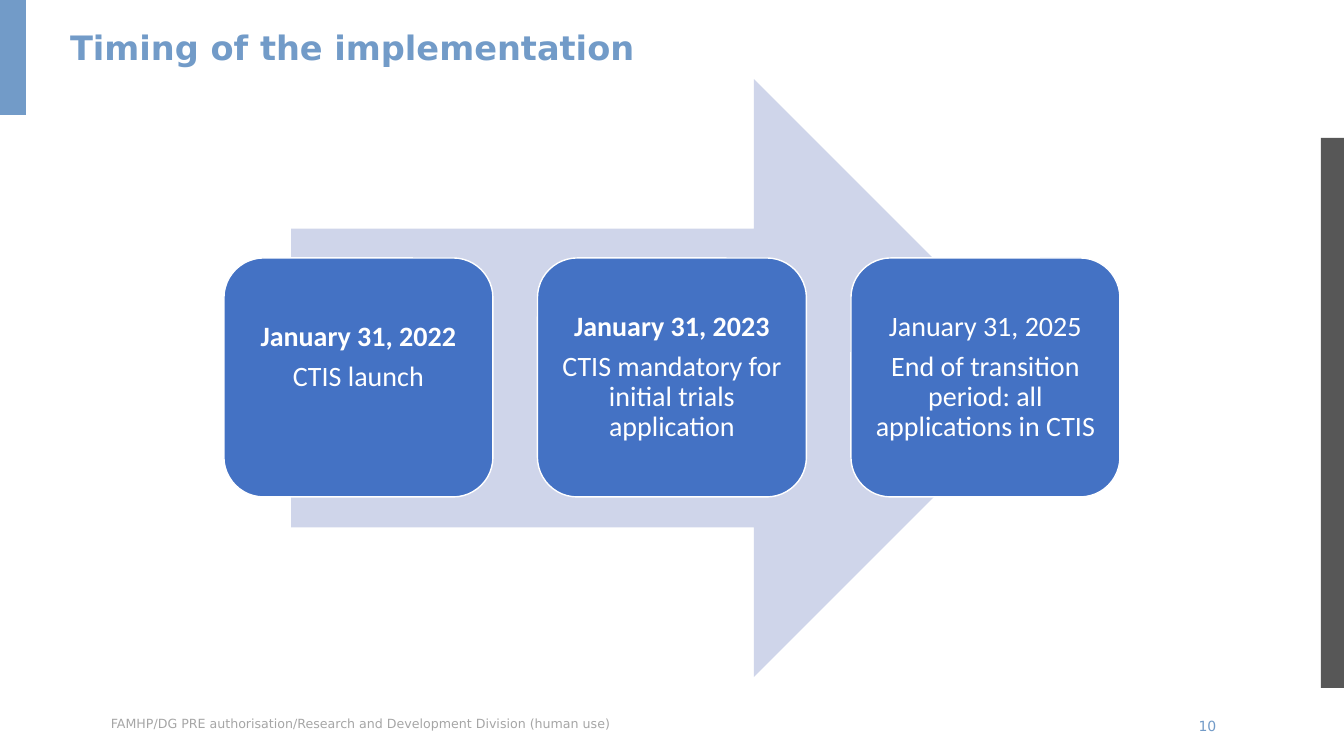
import pptx
import pptx.dml.color
import pptx.enum.shapes
import pptx.enum.text
import pptx.util

TITLE = "Timing of the implementation"
FOOTER = "FAMHP/DG PRE authorisation/Research and Development Division (human use)"
PAGE_NUMBER = "10"
# date, milestone, bold date, extra room below the text in px
MILESTONES = [
    ("January 31, 2022", "CTIS launch", True, 41),
    ("January 31, 2023", "CTIS mandatory for initial trials application", True, 0),
    ("January 31, 2025", "End of transition period: all applications in CTIS", False, 0),
]

ACCENT, GREY, MUTED = "729BC8", "575757", "A6A6A6"
CARD_BLUE, ARROW_BLUE, WHITE = "4472C4", "CFD5EA", "FFFFFF"
HEAD_FONT, CARD_FONT = "DejaVu Sans", "Calibri"

CARD_LEFT, CARD_TOP, CARD_WIDTH, CARD_HEIGHT = 224, 258, 269, 239
CARD_STEP, CARD_INSET = 313.5, 8

SHAPES = pptx.enum.shapes.MSO_SHAPE
ALIGN = pptx.enum.text.PP_ALIGN
ANCHOR = pptx.enum.text.MSO_ANCHOR


def px(length):
    return pptx.util.Emu(round(length * 914400 / 100.8))


def colour(value):
    return pptx.dml.color.RGBColor.from_string(value)


def add_block(page, kind, area, fill, outline=None):
    block = page.shapes.add_shape(kind, *map(px, area))
    block.shadow.inherit = False
    block.fill.solid()
    block.fill.fore_color.rgb = colour(fill)
    if outline:
        block.line.color.rgb = colour(outline)
        block.line.width = pptx.util.Pt(1)
    else:
        block.line.fill.background()
    return block


def style(para, font, size, ink, bold=False, align=ALIGN.LEFT):
    para.alignment = align
    para.font.name = font
    para.font.size = pptx.util.Pt(size)
    para.font.color.rgb = colour(ink)
    para.font.bold = bold


def add_label(page, area, text, size, ink, align, anchor):
    box = page.shapes.add_textbox(*map(px, area))
    frame = box.text_frame
    frame.word_wrap = True
    frame.vertical_anchor = anchor
    frame.text = text
    style(frame.paragraphs[0], HEAD_FONT, size, ink, align=align)


def add_card(page, index, date, milestone, bold, room_below):
    left = CARD_LEFT + index * CARD_STEP
    card = add_block(page, SHAPES.ROUNDED_RECTANGLE,
                     (left, CARD_TOP, CARD_WIDTH, CARD_HEIGHT), CARD_BLUE, WHITE)
    frame = card.text_frame
    frame.word_wrap = True
    frame.vertical_anchor = ANCHOR.MIDDLE
    frame.margin_left = frame.margin_right = frame.margin_top = px(CARD_INSET)
    frame.margin_bottom = px(CARD_INSET + room_below)
    frame.text = f"{date}\n{milestone}"
    for para, is_bold in zip(frame.paragraphs, (bold, False)):
        style(para, CARD_FONT, 20, WHITE, is_bold, ALIGN.CENTER)
        para.line_spacing = 0.9
        para.space_after = pptx.util.Pt(7)


def main():
    deck = pptx.Presentation()
    deck.slide_width, deck.slide_height = px(1344), px(756)
    page = deck.slides.add_slide(deck.slide_layouts[5])

    # Side bars, page number and footer
    add_block(page, SHAPES.RECTANGLE, (1321, 138, 23, 550), GREY)
    add_block(page, SHAPES.RECTANGLE, (-2, 0, 28, 115), ACCENT)
    add_label(page, (1150, 713, 115, 27), PAGE_NUMBER, 10, ACCENT,
              ALIGN.CENTER, ANCHOR.TOP)
    add_label(page, (101, 708, 666, 31), FOOTER, 9, MUTED,
              ALIGN.LEFT, ANCHOR.MIDDLE)

    # Title
    title = page.shapes.title
    title.left, title.top, title.width, title.height = map(px, (60, 26, 1005, 86))
    frame = title.text_frame
    frame.text = TITLE
    frame.auto_size = pptx.enum.text.MSO_AUTO_SIZE.NONE
    frame.vertical_anchor = ANCHOR.TOP
    style(frame.paragraphs[0], HEAD_FONT, 24, ACCENT, bold=True)
    frame.paragraphs[0].line_spacing = 0.9

    # Timeline arrow and milestone cards
    add_block(page, SHAPES.RIGHT_ARROW, (291, 79, 762, 598), ARROW_BLUE)
    for index, milestone in enumerate(MILESTONES):
        add_card(page, index, *milestone)

    deck.save("out.pptx")


if __name__ == "__main__":
    main()
